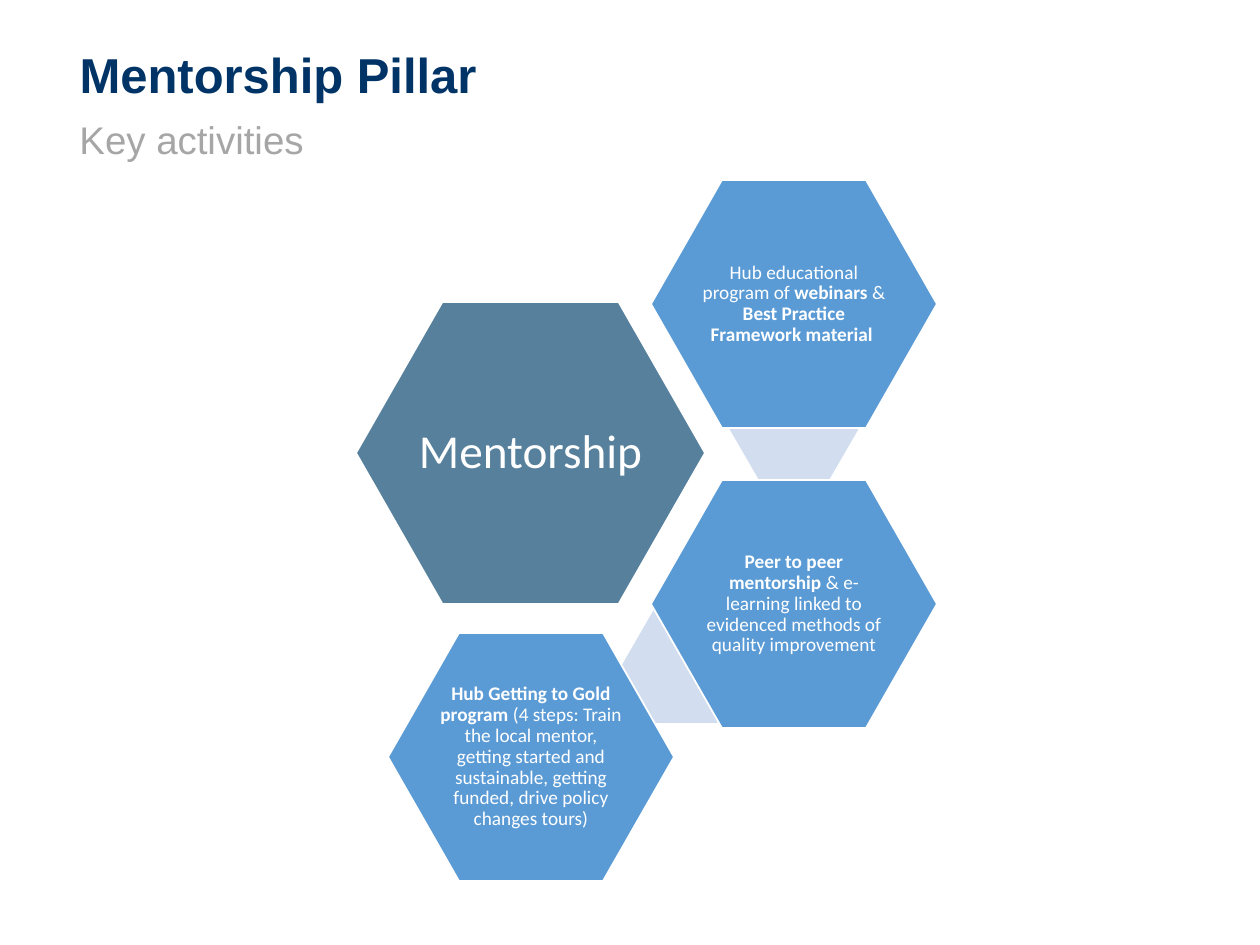
from dataclasses import dataclass

from pptx import Presentation
from pptx.dml.color import RGBColor
from pptx.enum.shapes import MSO_SHAPE as Shape
from pptx.enum.text import MSO_ANCHOR as Anchor, PP_ALIGN as Align
from pptx.util import Emu, Pt


@dataclass(frozen=True)
class Theme:
    navy: str = "003366"
    gray: str = "A6A6A6"
    slate: str = "56809C"
    blue: str = "5B9BD5"
    pale: str = "D2DEEF"
    white: str = "FFFFFF"
    head: str = "Arial"
    body: str = "Calibri"
    title: int = 28
    sub: int = 22
    hub: int = 27
    note: int = 11


THEME = Theme()
SMALL = (286, 248)

# Each activity: left, top, then (text, bold) runs
WEBINAR = (651, 180, [("Hub educational program of ", False), ("webinars", True),
                      (" & ", False), ("Best Practice Framework material ", True)])
PEER = (651, 480, [("Peer to peer mentorship ", True),
                   ("& e-learning linked to evidenced methods of quality improvement", False)])
GOLD = (388, 633, [("Hub Getting to Gold program ", True),
                   ("(4 steps: Train the local mentor, getting started and sustainable, "
                    "getting funded, drive policy changes tours)", False)])


def px(num):
    return Emu(round(num * 914400 / 126))


def rgb(code):
    return RGBColor.from_string(code)


def style(para, face, size, color, align):
    para.alignment = align
    para.line_spacing = 0.9
    font = para.font
    font.name, font.size = face, Pt(size)
    font.color.rgb = rgb(color)


def heading(shape, top, high, text, size, color, anchor, bold=False):
    shape.left, shape.top, shape.width, shape.height = map(px, (67, top, 1129, high))
    frame = shape.text_frame
    frame.word_wrap = True
    frame.vertical_anchor = anchor
    para = frame.paragraphs[0]
    para.text = text
    style(para, THEME.head, size, color, Align.LEFT)
    para.font.bold = bold


def hexagon(slide, box, color, adj=0.286):
    shape = slide.shapes.add_shape(Shape.HEXAGON, *map(px, box))
    shape.adjustments[0] = adj
    shape.shadow.inherit = False
    shape.fill.solid()
    shape.fill.fore_color.rgb = rgb(color)
    shape.line.fill.background()
    return shape


def link(slide, left, top):
    """Pale hexagon that shows between two activities."""
    hexagon(slide, (left, top, 132, 113), THEME.pale, 0.289)


def label(slide, box, color, runs, size, inset):
    """White-edged hexagon with centred text."""
    shape = hexagon(slide, box, color)
    shape.line.color.rgb = rgb(THEME.white)
    shape.line.width = Pt(1)
    frame = shape.text_frame
    frame.word_wrap = True
    frame.vertical_anchor = Anchor.MIDDLE
    frame.margin_left = frame.margin_right = px(inset)
    frame.margin_top = frame.margin_bottom = px(inset)
    para = frame.paragraphs[0]
    style(para, THEME.body, size, THEME.white, Align.CENTER)
    for text, bold in runs:
        run = para.add_run()
        run.text = text
        run.font.bold = bold


def activity(slide, left, top, runs):
    label(slide, (left, top, *SMALL), THEME.blue, runs, THEME.note, 3)


def main():
    deck = Presentation()
    deck.slide_width, deck.slide_height = px(1260), px(945)
    slide = deck.slides.add_slide(deck.slide_layouts[5])

    heading(slide.shapes.title, 42, 68, "Mentorship Pillar",
            THEME.title, THEME.navy, Anchor.BOTTOM, True)
    sub = slide.shapes.add_textbox(0, 0, 0, 0)
    heading(sub, 115, 69, "Key activities", THEME.sub, THEME.gray, Anchor.TOP)

    label(slide, (356, 302, 349, 302), THEME.slate,
          [("Mentorship ", False)], THEME.hub, 5)
    link(slide, 728, 370)
    activity(slide, *WEBINAR)
    link(slide, 621, 610)
    activity(slide, *PEER)
    activity(slide, *GOLD)
    deck.save("out.pptx")


if __name__ == "__main__":
    main()
